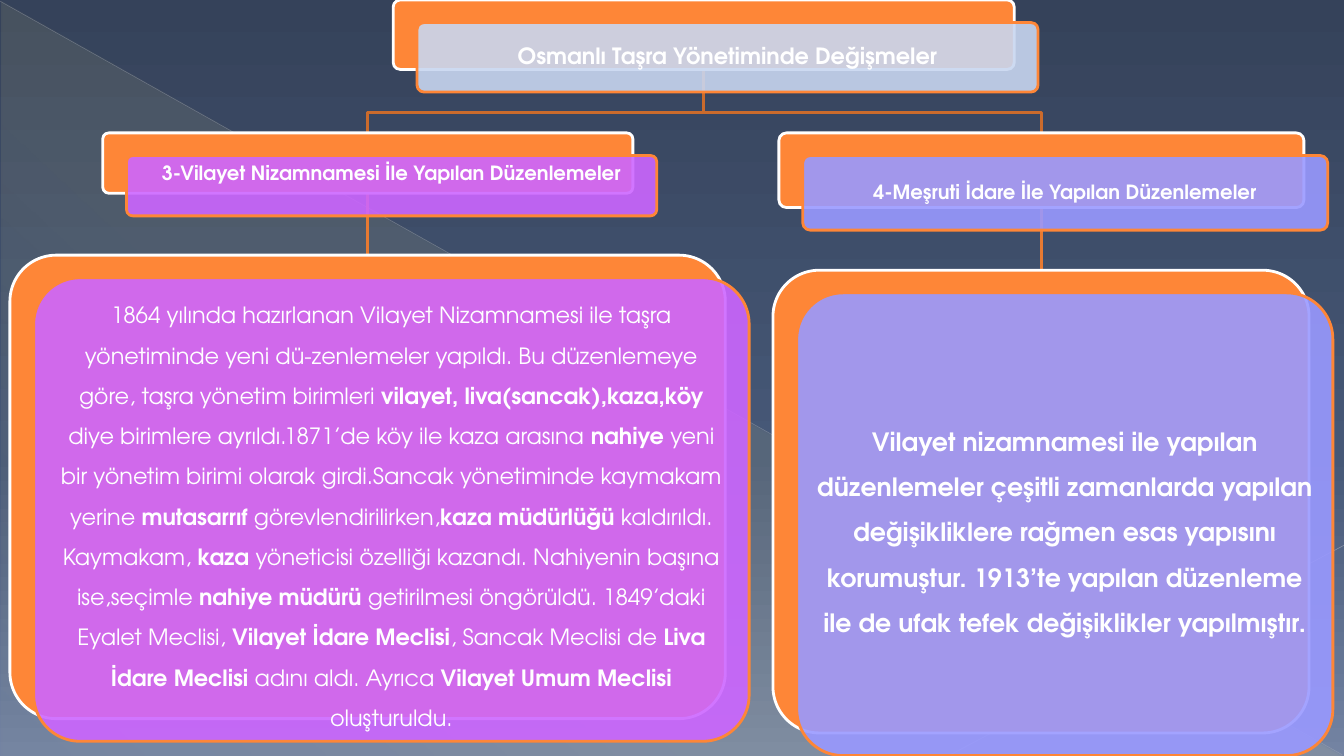
"""Build a hierarchy slide on changes in Ottoman provincial administration."""
from dataclasses import dataclass

from lxml.etree import SubElement
from pptx import Presentation
from pptx.dml.color import RGBColor as Rgb
from pptx.enum.shapes import MSO_CONNECTOR as Connector, MSO_SHAPE as Preset
from pptx.enum.text import MSO_ANCHOR as Anchor, PP_ALIGN as Align
from pptx.oxml.ns import qn
from pptx.util import Cm, Pt


@dataclass(frozen=True)
class Theme:
    font: str = "TeX Gyre Adventor"
    text: str = "FFFFFF"
    orange: str = "FE8637"
    branch: str = "CB6B2C"
    stem: str = "E77A32"
    pale_blue: str = "C8D6F0"
    purple: str = "CC66FF"
    lavender: str = "9999FF"
    light: str = "FFF39D"
    upper_ray: str = "BABDC4"
    lower_ray: str = "C1C4CA"
    topic_size: int = 14
    base_size: int = 16
    large_size: int = 18
    outline: float = 2
    card_opacity: int = 90


@dataclass(frozen=True)
class Stop:
    position: int
    color: str
    opacity: int = 100


@dataclass(frozen=True)
class Card:
    left: float
    top: float
    width: float
    height: float
    color: str
    text: str
    size: int
    bold: bool = True
    line_spacing: float = 0.9
    inset: float = 0.16
    inset_top: float = 0.16
    inset_bottom: float = 0.16

    @property
    def center(self) -> float:
        return self.left + SHIFT_X + self.width / 2

    @property
    def axis(self) -> float:
        return self.left + self.width / 2

    @property
    def bottom(self) -> float:
        return self.top + self.height


THEME = Theme()
WIDTH, HEIGHT = 33.87, 19.05
SHIFT_X, SHIFT_Y = 0.6, 0.57
BRANCH_Y = 2.84

SKY = [Stop(0, "35425A"), Stop(60, "465877"), Stop(100, "7383A2")]
GLOW = [Stop(0, THEME.light, 10), Stop(70, THEME.light, 8), Stop(100, THEME.light, 1)]

ROOT = Card(9.91, 0, 15.65, 1.75, THEME.pale_blue,
            "Osmanlı Taşra Yönetiminde Değişmeler", THEME.base_size)
PROVINCE = Card(2.59, 3.35, 13.36, 1.52, THEME.purple,
                "3-Vilayet Nizamnamesi İle Yapılan Düzenlemeler",
                THEME.topic_size, inset_top=0.05, inset_bottom=0.65)
PROVINCE_DETAIL = Card(
    0.25, 6.43, 18.03, 11.68, THEME.purple,
    "1864 yılında hazırlanan Vilayet Nizamnamesi ile taşra yönetiminde yeni "
    "dü-zenlemeler yapıldı. Bu düzenlemeye göre, taşra yönetim birimleri "
    "*vilayet, liva(sancak),kaza,köy* diye birimlere ayrıldı.1871’de köy ile "
    "kaza arasına *nahiye *yeni bir yönetim birimi olarak girdi.Sancak "
    "yönetiminde kaymakam yerine *mutasarrıf *görevlendirilirken,"
    "*kaza müdürlüğü* kaldırıldı. Kaymakam, *kaza *yöneticisi özelliği kazandı. "
    "Nahiyenin başına ise,seçimle *nahiye müdürü* getirilmesi öngörüldü. "
    "1849’daki Eyalet Meclisi, *Vilayet İdare Meclisi*, Sancak Meclisi de "
    "*Liva İdare Meclisi* adını aldı. Ayrıca *Vilayet Umum Meclisi* oluşturuldu.",
    THEME.base_size, bold=False, line_spacing=1.5)
CONSTITUTIONAL = Card(19.63, 3.35, 13.23, 1.88, THEME.lavender,
                      "4-Meşruti İdare İle Yapılan Düzenlemeler", THEME.topic_size)
CONSTITUTIONAL_DETAIL = Card(
    19.48, 6.81, 13.51, 11.66, THEME.lavender,
    "Vilayet nizamnamesi ile yapılan düzenlemeler çeşitli zamanlarda yapılan "
    "değişikliklere rağmen esas yapısını korumuştur. 1913’te yapılan düzenleme "
    "ile de ufak tefek değişiklikler yapılmıştır.",
    THEME.large_size, line_spacing=1.5)
BRANCHES = [(PROVINCE, PROVINCE_DETAIL), (CONSTITUTIONAL, CONSTITUTIONAL_DETAIL)]


def set_opacity(color_element, percent: int) -> None:
    """Give a colour element an opacity in percent."""
    SubElement(color_element, qn("a:alpha"), val=str(percent * 1000))


def set_gradient(holder, stops: list[Stop], angle: int) -> None:
    """Replace the first solid fill in the holder by a linear gradient."""
    solid = next(holder.iter(qn("a:solidFill")))
    parent = solid.getparent()
    gradient = SubElement(parent, qn("a:gradFill"), rotWithShape="1")
    parent.replace(solid, gradient)
    stop_list = SubElement(gradient, qn("a:gsLst"))
    for stop in stops:
        entry = SubElement(stop_list, qn("a:gs"), pos=str(stop.position * 1000))
        color = SubElement(entry, qn("a:srgbClr"), val=stop.color)
        set_opacity(color, stop.opacity)
    SubElement(gradient, qn("a:lin"), ang=str(angle * 60000), scaled="0")


def draw_line(slide, start: tuple[float, float], end: tuple[float, float],
              color: str, width: float, opacity: int = 100) -> None:
    """Draw a straight line between two points."""
    line = slide.shapes.add_connector(Connector.STRAIGHT, *map(Cm, start + end))
    line.line.color.rgb = Rgb.from_string(color)
    line.line.width = Pt(width)
    properties = line._element.spPr
    set_opacity(next(properties.iter(qn("a:srgbClr"))), opacity)
    SubElement(properties, qn("a:effectLst"))


def draw_backdrop(slide) -> None:
    """Draw the sky gradient, the glow and the two rays."""
    slide.background.fill.solid()
    set_gradient(slide._element.cSld, SKY, 90)
    glow = slide.shapes.add_shape(Preset.RIGHT_TRIANGLE, Cm(0.03), Cm(0.05),
                                  Cm(33.81), Cm(19))
    glow.shadow.inherit = False
    glow.fill.solid()
    glow.line.fill.background()
    set_gradient(glow._element.spPr, GLOW, 133)
    draw_line(slide, (0, 0.03), (33.83, 19.02), THEME.upper_ray, 0.39, 35)
    draw_line(slide, (WIDTH, 13.74), (23.95, 19.02), THEME.lower_ray, 0.47, 45)


def draw_branch(slide, parent: Card, child: Card) -> None:
    """Draw the elbow from a parent card down to a child card."""
    corners = [(parent.axis, BRANCH_Y), (child.axis, BRANCH_Y), (child.axis, child.top)]
    builder = slide.shapes.build_freeform(Cm(parent.axis), Cm(parent.bottom))
    builder.add_line_segments([(Cm(x), Cm(y)) for x, y in corners], close=False)
    elbow = builder.convert_to_shape()
    elbow.shadow.inherit = False
    elbow.fill.background()
    elbow.line.color.rgb = Rgb.from_string(THEME.branch)
    elbow.line.width = Pt(THEME.outline)


def draw_plate(slide, card: Card, shift: tuple[float, float], fill: str, line: str):
    """Draw one rounded plate of a card and return it."""
    plate = slide.shapes.add_shape(
        Preset.ROUNDED_RECTANGLE, Cm(card.left + shift[0]), Cm(card.top + shift[1]),
        Cm(card.width), Cm(card.height))
    plate.adjustments[0] = 0.1
    plate.shadow.inherit = False
    plate.fill.solid()
    plate.fill.fore_color.rgb = Rgb.from_string(fill)
    plate.line.color.rgb = Rgb.from_string(line)
    plate.line.width = Pt(THEME.outline)
    return plate


def draw_card(slide, card: Card) -> None:
    """Draw a back plate and the translucent front plate with its text."""
    draw_plate(slide, card, (0, 0), THEME.orange, THEME.text)
    front = draw_plate(slide, card, (SHIFT_X, SHIFT_Y), card.color, THEME.orange)
    set_opacity(next(front._element.spPr.iter(qn("a:srgbClr"))), THEME.card_opacity)
    frame = front.text_frame
    frame.word_wrap = True
    frame.vertical_anchor = Anchor.MIDDLE
    frame.margin_left = frame.margin_right = Cm(card.inset)
    frame.margin_top, frame.margin_bottom = Cm(card.inset_top), Cm(card.inset_bottom)
    paragraph = frame.paragraphs[0]
    paragraph.alignment = Align.CENTER
    paragraph.line_spacing = card.line_spacing
    font = paragraph.font
    font.name, font.size, font.bold = THEME.font, Pt(card.size), card.bold
    font.color.rgb = Rgb.from_string(THEME.text)
    for index, words in enumerate(card.text.split("*")):
        run = paragraph.add_run()
        run.text = words
        if index % 2:
            run.font.bold = True


def main() -> None:
    """Build and save the slide."""
    deck = Presentation()
    deck.slide_width, deck.slide_height = Cm(WIDTH), Cm(HEIGHT)
    slide = deck.slides.add_slide(deck.slide_layouts[6])
    draw_backdrop(slide)
    for topic, detail in BRANCHES:
        draw_line(slide, (topic.axis, topic.bottom), (topic.axis, detail.top),
                  THEME.stem, THEME.outline)
        draw_branch(slide, ROOT, topic)
    for card in [ROOT] + [card for branch in BRANCHES for card in branch]:
        draw_card(slide, card)
    deck.save("out.pptx")


if __name__ == "__main__":
    main()
